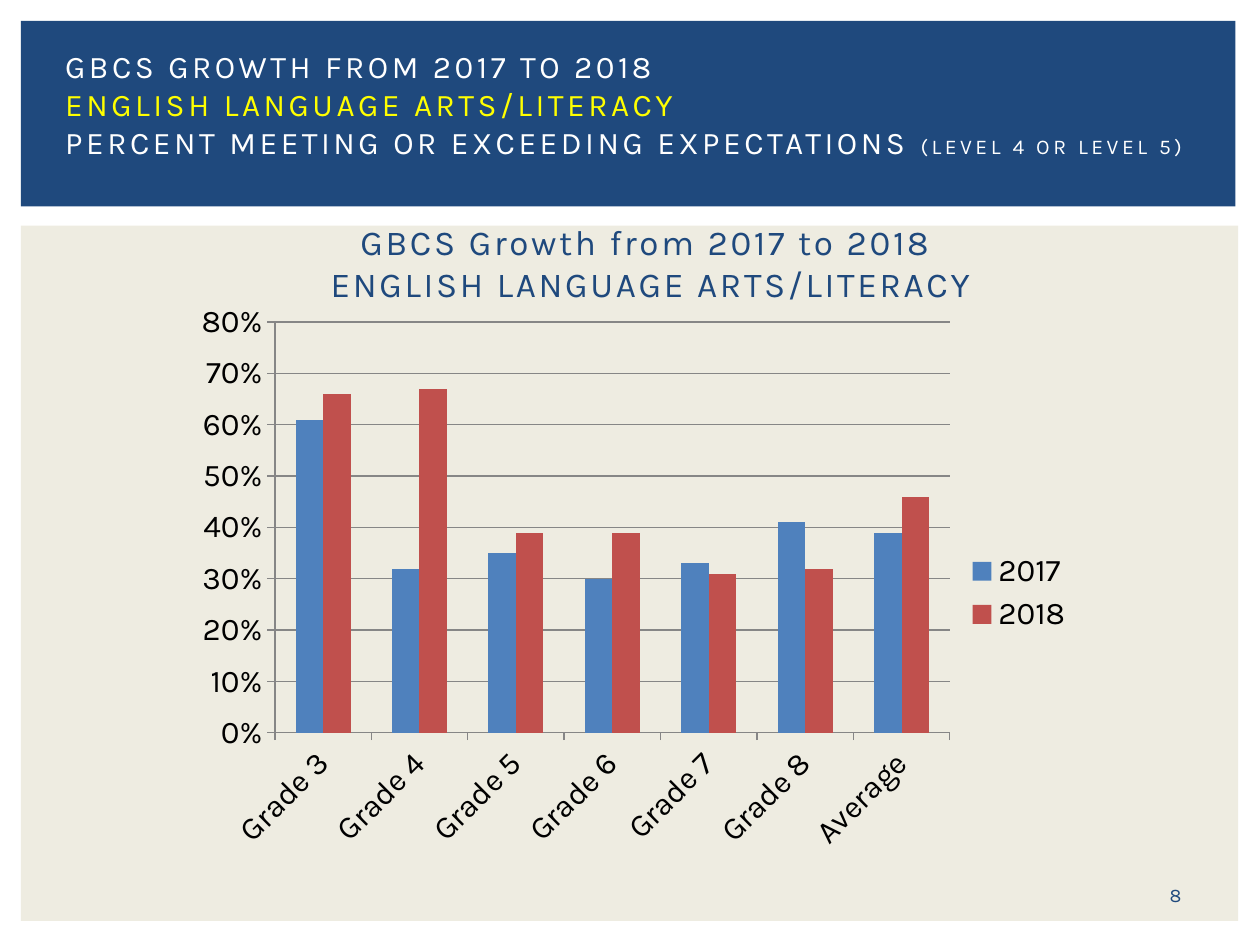
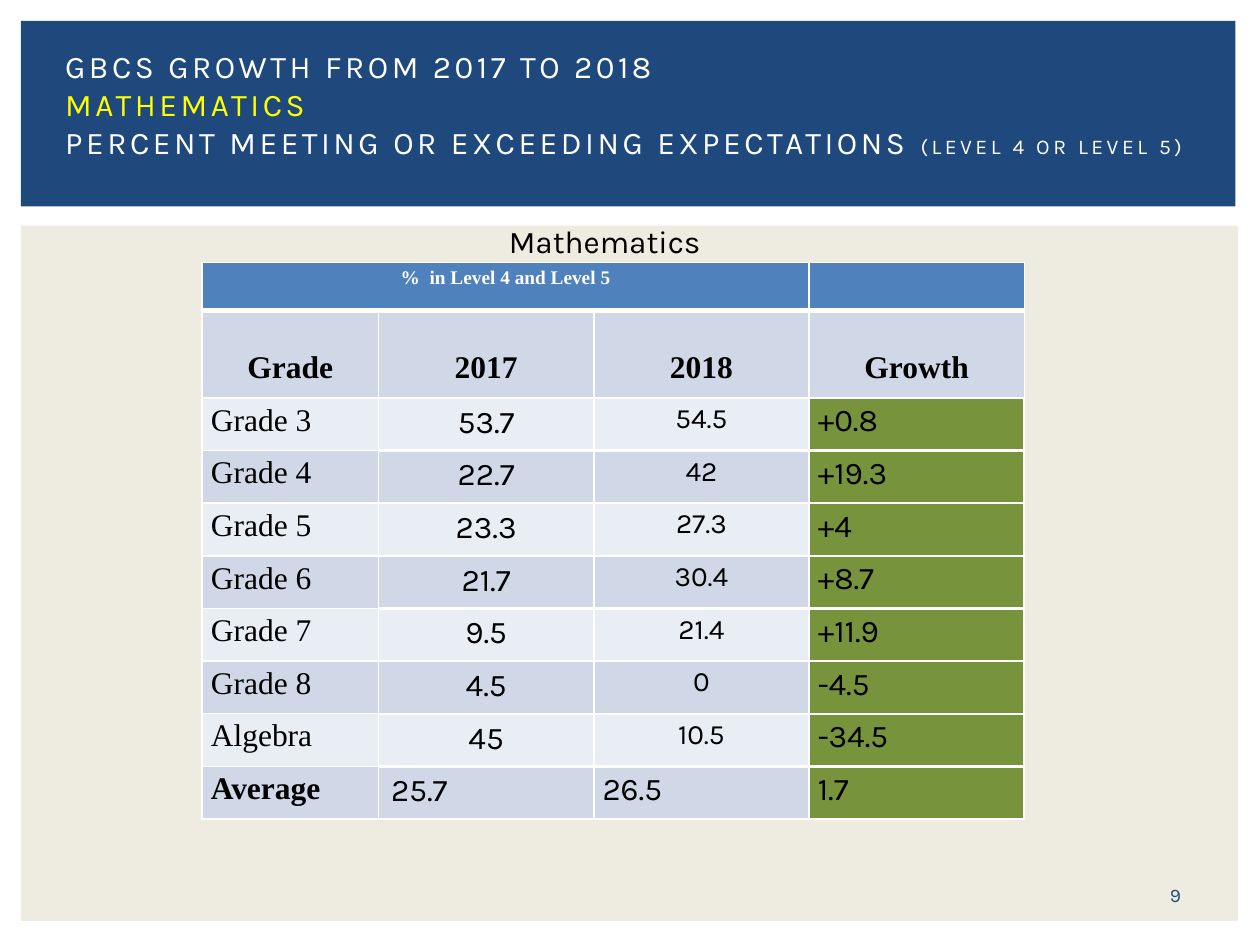
from lxml import etree
from pptx import Presentation
from pptx.chart.data import CategoryChartData as ChartData
from pptx.dml.color import RGBColor as Rgb
from pptx.enum.chart import XL_CHART_TYPE as Kind, XL_LEGEND_POSITION as Legend
from pptx.enum.chart import XL_TICK_MARK as Tick
from pptx.enum.shapes import MSO_SHAPE as Shape
from pptx.enum.text import MSO_ANCHOR as Anchor, PP_ALIGN as Align
from pptx.oxml import parse_xml
from pptx.oxml.ns import nsdecls, qn
from pptx.util import Pt

HUE = {
    "navy": "1F497D", "sand": "EEECE1", "white": "FFFFFF", "black": "000000",
    "yellow": "FFFF00", "blue": "4F81BD", "red": "C0504D", "green": "77933C",
    "dark": "D0D8E8", "light": "E9EDF4", "grey": "868686",
}
COLOR = {name: Rgb.from_string(code) for name, code in HUE.items()}
SANS, SERIF = "Karla", "Times New Roman"
LEFT, MID = Align.LEFT, Align.CENTER


def write(frame, lines, size=18, font=SANS, color="black", bold=False,
          align=LEFT, gap=0, anchor=Anchor.TOP):
    """Each line is a list of (text, format) runs; gap is letter spacing."""
    frame.word_wrap = True
    frame.vertical_anchor = anchor
    for i, line in enumerate(lines):
        para = frame.paragraphs[0] if i == 0 else frame.add_paragraph()
        para.alignment = align
        for text, own in line:
            run = para.add_run()
            run.text = text
            run.font.name = font
            run.font.size = Pt(own.get("size", size))
            run.font.bold = bold
            run.font.color.rgb = COLOR[own.get("color", color)]
            if gap:
                run.font._element.set("spc", str(int(gap * 100)))


def edge(cell, widths):
    """White cell borders, widths in points: left, right, top, bottom."""
    props = cell._tc.get_or_add_tcPr()
    for i, (side, width) in enumerate(zip("LRTB", widths)):
        props.insert(i, parse_xml(
            f'<a:ln{side} {nsdecls("a")} w="{Pt(width)}"><a:solidFill>'
            f'<a:srgbClr val="{HUE["white"]}"/></a:solidFill></a:ln{side}>'))


deck = Presentation()
deck.slide_width, deck.slide_height = Pt(720), Pt(540)

# Shared frame: panel, title band, title, page number
slides = []
for page, topic in ((8, "ENGLISH LANGUAGE ARTS/LITERACY"), (9, "MATHEMATICS")):
    slide = deck.slides.add_slide(deck.slide_layouts[6])
    slides.append(slide)
    for top, width, height, hue in ((128.9, 695.5, 397.4, "sand"),
                                    (12, 694, 106, "navy")):
        band = slide.shapes.add_shape(Shape.RECTANGLE, Pt(12), Pt(top),
                                      Pt(width), Pt(height))
        band.shadow.inherit = False
        band.fill.solid()
        band.fill.fore_color.rgb = COLOR[hue]
        band.line.fill.background()
    title = slide.shapes.add_textbox(Pt(30.2), Pt(23.6), Pt(660), Pt(83))
    write(title.text_frame, [
        [("GBCS GROWTH FROM 2017 TO 2018", {})],
        [(topic, {"color": "yellow"})],
        [("PERCENT MEETING OR EXCEEDING EXPECTATIONS ", {}),
         ("(LEVEL 4 OR LEVEL 5)", {"size": 12})],
    ], color="white", gap=2)
    number = slide.shapes.add_textbox(Pt(648.7), Pt(500.4), Pt(46), Pt(21.6))
    write(number.text_frame, [[(str(page), {})]], size=11, color="navy",
          align=MID, anchor=Anchor.MIDDLE)
first, second = slides

# Growth chart
data = ChartData(number_format="0.00%")
data.categories = [f"Grade {n}" for n in range(3, 9)] + ["Average"]
data.add_series("2017", (0.61, 0.32, 0.35, 0.3, 0.33, 0.41, 0.39))
data.add_series("2018", (0.66, 0.67, 0.39, 0.39, 0.31, 0.32, 0.46))
chart = first.shapes.add_chart(Kind.COLUMN_CLUSTERED, Pt(64.8), Pt(172.8),
                               Pt(555.8), Pt(332), data).chart
chart.has_title = False
chart.font.name, chart.font.size = SANS, Pt(18)
chart.font.color.rgb = COLOR["black"]
chart.has_legend = True
chart.legend.position = Legend.RIGHT
chart.legend.include_in_layout = False
plot = chart.plots[0]
plot.gap_width, plot.overlap, plot.vary_by_categories = 150, 0, False
for series, hue in zip(plot.series, ("blue", "red")):
    series.format.fill.solid()
    series.format.fill.fore_color.rgb = COLOR[hue]

# Chart axes
cats, vals = chart.category_axis, chart.value_axis
vals.minimum_scale, vals.maximum_scale, vals.major_unit = 0, 0.8, 0.1
vals.has_major_gridlines = True
vals.tick_labels.number_format = "0%"
vals.tick_labels.number_format_is_linked = False
for axis in (cats, vals):
    axis.major_tick_mark, axis.minor_tick_mark = Tick.OUTSIDE, Tick.NONE
    axis.tick_labels.font.size = Pt(18)
    axis.format.line.color.rgb = COLOR["grey"]
vals.major_gridlines.format.line.color.rgb = COLOR["grey"]
cats._element.find(qn("c:txPr")).find(qn("a:bodyPr")).set("rot", "-2700000")

# Fixed plot area
area = chart._chartSpace.chart.plotArea
for old in area.findall(qn("c:layout")):
    area.remove(old)
layout = parse_xml(f'<c:layout {nsdecls("c")}><c:manualLayout/></c:layout>')
for tag, val in (("layoutTarget", "inner"), ("xMode", "edge"),
                 ("yMode", "edge"), ("x", 0.166), ("y", 0.034),
                 ("w", 0.694), ("h", 0.707)):
    etree.SubElement(layout[0], qn("c:" + tag)).set("val", str(val))
area.insert(0, layout)

# Chart heading
head = first.shapes.add_textbox(Pt(40.7), Pt(122.4), Pt(662), Pt(60))
write(head.text_frame, [[("GBCS Growth from 2017 to 2018 ", {})],
                        [("ENGLISH LANGUAGE ARTS/LITERACY", {})]],
      size=20, color="navy", align=MID, gap=1.5)

# Growth table
ROWS = [
    ("%  in Level 4 and Level 5", "", "", ""),
    ("Grade", "2017", "2018", "Growth"),
    ("Grade 3", "53.7", "54.5", "+0.8"),
    ("Grade 4", "22.7", "42", "+19.3"),
    ("Grade 5", "23.3", "27.3", "+4"),
    ("Grade 6", "21.7", "30.4", "+8.7"),
    ("Grade 7", "9.5", "21.4", "+11.9"),
    ("Grade 8", "4.5", "0", "-4.5"),
    ("Algebra", "45", "10.5", "-34.5"),
    ("Average", "25.7", "26.5", "1.7"),
]
last = len(ROWS) - 1
table = second.shapes.add_table(len(ROWS), 4, Pt(115.5), Pt(150), Pt(469.8),
                                Pt(318.3)).table
for c, width in enumerate((100.8, 123, 123, 123)):
    table.columns[c].width = Pt(width)
for r, row in enumerate(ROWS):
    table.rows[r].height = Pt({0: 26.5, 1: 50}.get(r, 30.1))
    for c, text in enumerate(row):
        cell = table.cell(r, c)
        wide = c == 1 and r > 1
        cell.margin_left = cell.margin_right = Pt(7.2 if wide else 5)
        cell.margin_top = cell.margin_bottom = Pt(3.6 if wide else 2.9)
        hue = ("blue" if r == 0 else "green" if c == 3 and r > 1
               else "light" if r > 1 and r % 2 == 0 else "dark")
        cell.fill.solid()
        cell.fill.fore_color.rgb = COLOR[hue]
        rule = 1 if c == 0 else 1.5
        edge(cell, (1, 1.5 if c == 3 and r > 1 else 1,
                    (1, 3)[r] if r < 2 else rule, 3 if r == 0 else rule))
        if not text:
            continue
        middle = r < 2 or (c in (1, 2) and r < last)
        write(cell.text_frame, [[(text, {})]],
              size=11 if r == 0 else 16 if c == 2 and 1 < r < last else 18,
              font=SERIF if r < 2 or c == 0 else SANS,
              color="white" if r == 0 else "black",
              bold=r < 2 or (r == last and c == 0),
              align=MID if middle else LEFT)
        if r == 1:
            cell.vertical_anchor = Anchor.BOTTOM
            cell.margin_bottom = Pt(7.5)
table.cell(0, 0).merge(table.cell(0, 2))

# Table heading
name = second.shapes.add_textbox(Pt(283.7), Pt(123.1), Pt(129.6), Pt(28.8))
write(name.text_frame, [[("Mathematics", {})]])

deck.save("out.pptx")
